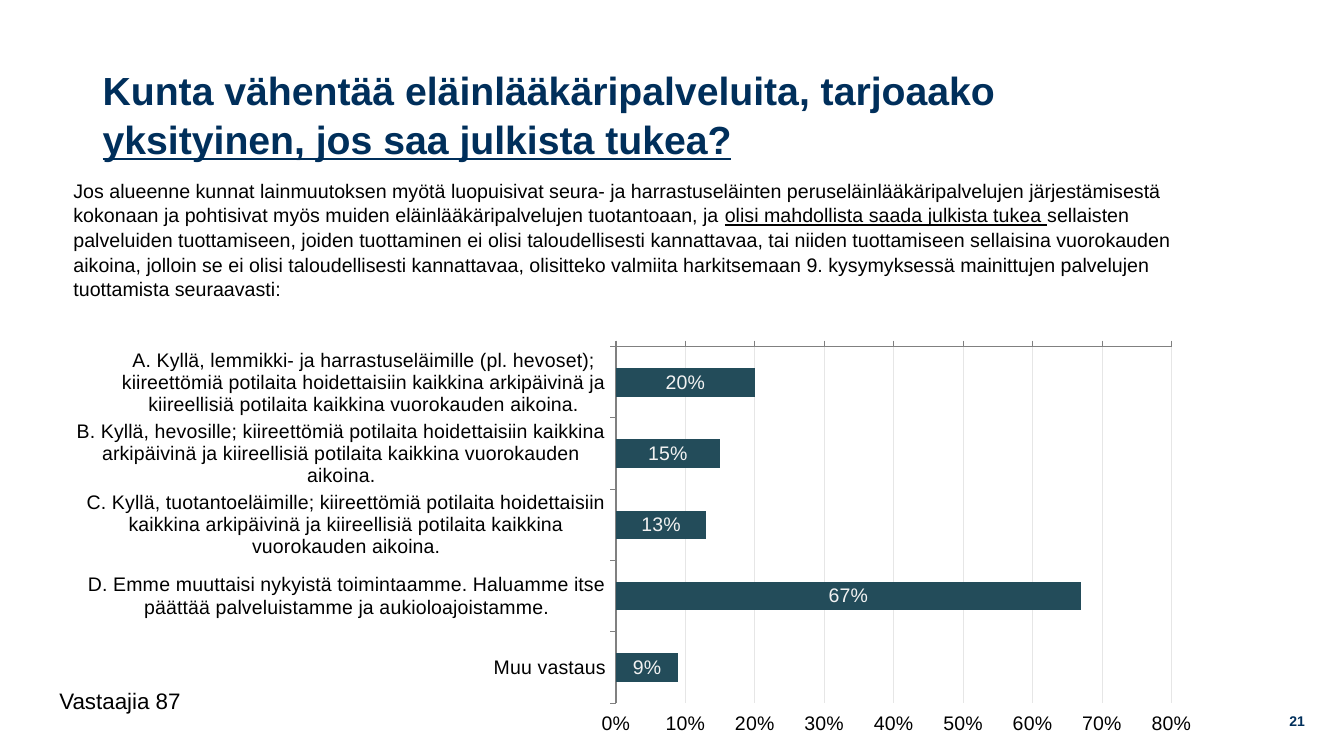
from dataclasses import dataclass

from lxml import etree
from pptx import Presentation
from pptx.chart.data import CategoryChartData
from pptx.dml.color import RGBColor
from pptx.enum.chart import XL_CHART_TYPE, XL_LABEL_POSITION, XL_TICK_LABEL_POSITION, XL_TICK_MARK
from pptx.enum.text import MSO_ANCHOR, PP_ALIGN
from pptx.oxml.ns import qn
from pptx.util import Inches, Pt

BAR = XL_CHART_TYPE.BAR_CLUSTERED
CENTER = XL_LABEL_POSITION.CENTER
HIGH = XL_TICK_LABEL_POSITION.HIGH
OUTSIDE, NO_TICK = XL_TICK_MARK.OUTSIDE, XL_TICK_MARK.NONE
TOP, MIDDLE = MSO_ANCHOR.TOP, MSO_ANCHOR.MIDDLE
LEFT, RIGHT = PP_ALIGN.LEFT, PP_ALIGN.RIGHT


@dataclass(frozen=True)
class Theme:
    font: str = "Arial"
    navy: str = "002F5B"
    black: str = "000000"
    white: str = "FFFFFF"
    bar: str = "234C5A"
    bar_label: str = "F2F2F2"
    grid: str = "E6E6E6"
    axis: str = "808080"
    title_size: int = 28
    note_size: int = 16
    body_size: int = 14
    number_size: int = 10


@dataclass(frozen=True)
class Box:
    left: float
    top: float
    width: float
    height: float

    def emu(self) -> tuple:
        return tuple(Inches(v) for v in (self.left, self.top, self.width, self.height))


@dataclass(frozen=True)
class Run:
    text: str
    underline: bool = False


@dataclass(frozen=True)
class Answer:
    label: str
    share: float


T = Theme()

TITLE = [
    Run("Kunta vähentää eläinlääkäripalveluita, tarjoaako "),
    Run("yksityinen, jos saa julkista tukea?", underline=True),
]
QUESTION = [
    Run("Jos alueenne kunnat lainmuutoksen myötä luopuisivat seura- ja harrastuseläinten "
        "peruseläinlääkäripalvelujen järjestämisestä kokonaan ja pohtisivat myös muiden "
        "eläinlääkäripalvelujen tuotantoaan, ja "),
    Run("olisi mahdollista saada julkista tukea ", underline=True),
    Run("sellaisten palveluiden tuottamiseen, joiden tuottaminen ei olisi taloudellisesti "
        "kannattavaa, tai niiden tuottamiseen sellaisina vuorokauden aikoina, jolloin se ei olisi "
        "taloudellisesti kannattavaa, olisitteko valmiita harkitsemaan 9. kysymyksessä mainittujen "
        "palvelujen tuottamista seuraavasti:"),
]
CARE = ("kiireettömiä potilaita hoidettaisiin kaikkina arkipäivinä ja kiireellisiä potilaita "
        "kaikkina vuorokauden aikoina.")
ANSWERS = [
    Answer(f"A. Kyllä, lemmikki- ja harrastuseläimille (pl. hevoset); {CARE}", 0.20),
    Answer(f"B. Kyllä, hevosille; {CARE}", 0.15),
    Answer(f"C. Kyllä, tuotantoeläimille; {CARE}", 0.13),
    Answer("D. Emme muuttaisi nykyistä toimintaamme. Haluamme itse päättää palveluistamme ja "
           "aukioloajoistamme.", 0.67),
    Answer("Muu vastaus", 0.09),
]


def rgb(color: str) -> RGBColor:
    return RGBColor.from_string(color)


def add_text(s, box: Box, runs: list[Run], *, size: int, color: str = T.black,
             bold: bool = False, align=LEFT, anchor=TOP, spacing: float = 1.0) -> None:
    tf = s.shapes.add_textbox(*box.emu()).text_frame
    tf.word_wrap = True
    tf.vertical_anchor = anchor
    p = tf.paragraphs[0]
    p.alignment, p.line_spacing = align, spacing
    for run in runs:
        r = p.add_run()
        r.text = run.text
        r.font.name, r.font.size, r.font.bold = T.font, Pt(size), bold
        r.font.underline = run.underline
        r.font.color.rgb = rgb(color)


def place_plot(chart, plot_box: Box) -> None:
    """Set the inner plot area, in fractions of the chart, with a white fill."""
    area = chart._chartSpace.chart.plotArea
    for old in area.findall(qn("c:layout")):
        area.remove(old)
    layout = etree.Element(qn("c:layout"))
    area.insert(0, layout)
    manual = etree.SubElement(layout, qn("c:manualLayout"))
    settings = {"layoutTarget": "inner", "xMode": "edge", "yMode": "edge",
                "x": plot_box.left, "y": plot_box.top, "w": plot_box.width, "h": plot_box.height}
    for name, value in settings.items():
        etree.SubElement(manual, qn(f"c:{name}")).set("val", str(value))
    fill = etree.SubElement(etree.SubElement(area, qn("c:spPr")), qn("a:solidFill"))
    etree.SubElement(fill, qn("a:srgbClr")).set("val", T.white)


def add_answer_chart(s, box: Box, plot_box: Box, answers: list[Answer]) -> None:
    data = CategoryChartData(number_format="0%")
    data.categories = [a.label for a in answers]
    data.add_series("Series 1", [a.share for a in answers])
    chart = s.shapes.add_chart(BAR, *box.emu(), data).chart
    chart.has_legend = chart.has_title = False
    chart.font.name, chart.font.size = T.font, Pt(T.body_size)
    chart.font.color.rgb = rgb(T.black)
    place_plot(chart, plot_box)

    # Axes: first answer on top, percentages along the bottom
    cat, val = chart.category_axis, chart.value_axis
    for axis in (cat, val):
        axis.major_tick_mark, axis.minor_tick_mark = OUTSIDE, NO_TICK
        axis.format.line.color.rgb = rgb(T.axis)
        axis.format.line.width = Pt(0.75)
    cat.reverse_order = True
    val.tick_label_position = HIGH
    val.minimum_scale, val.maximum_scale, val.major_unit = 0, 0.8, 0.1
    val.tick_labels.number_format = "0%"
    val.tick_labels.number_format_is_linked = False
    val.has_major_gridlines = True
    val.major_gridlines.format.line.color.rgb = rgb(T.grid)
    val.major_gridlines.format.line.width = Pt(0.75)

    # Bars and their labels
    plot = chart.plots[0]
    plot.gap_width, plot.vary_by_categories = 150, False
    fill = plot.series[0].format.fill
    fill.solid()
    fill.fore_color.rgb = rgb(T.bar)
    plot.has_data_labels = True
    labels = plot.data_labels
    labels.show_value, labels.position = True, CENTER
    labels.number_format, labels.number_format_is_linked = "0%", False
    labels.font.name, labels.font.size = T.font, Pt(T.body_size)
    labels.font.color.rgb = rgb(T.bar_label)


def main() -> None:
    prs = Presentation()
    prs.slide_width, prs.slide_height = Inches(13.33), Inches(7.5)
    s = prs.slides.add_slide(prs.slide_layouts[6])

    # Title and page number
    add_text(s, Box(0.92, 0.4, 10.64, 1.45), TITLE, size=T.title_size, color=T.navy,
             bold=True, anchor=MIDDLE, spacing=1.05)
    add_text(s, Box(10.04, 6.95, 3, 0.4), [Run("21")], size=T.number_size, color=T.navy,
             bold=True, align=RIGHT, anchor=MIDDLE)

    # Question, answers and number of respondents
    add_text(s, Box(0.63, 1.71, 11.21, 1.28), QUESTION, size=T.body_size, spacing=1.05)
    add_answer_chart(s, Box(0.76, 3.19, 11.08, 4.16), Box(0.48, 0.06, 0.5, 0.85), ANSWERS)
    add_text(s, Box(0.49, 6.77, 1.49, 0.37), [Run("Vastaajia 87")], size=T.note_size)

    prs.save("out.pptx")


if __name__ == "__main__":
    main()
